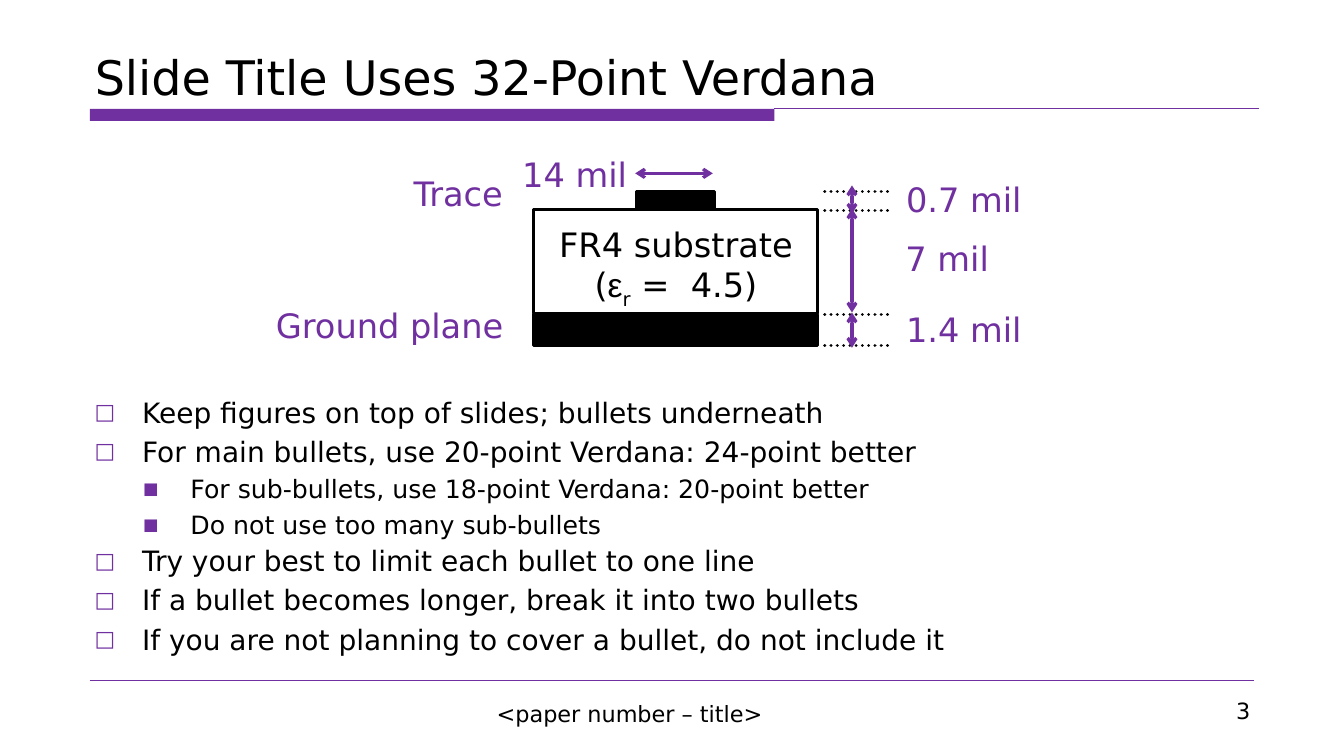
from lxml import etree
from pptx import Presentation
from pptx import util as u
from pptx.dml.color import RGBColor
from pptx.enum import dml, shapes, text
from pptx.oxml.ns import qn

PX = 9144  # 100 px to the inch
FONT = "DejaVu Sans"
PURPLE, BLACK, WHITE = "7030A0", "000000", "FFFFFF"
LEFT, CENTER, RIGHT = text.PP_ALIGN.LEFT, text.PP_ALIGN.CENTER, text.PP_ALIGN.RIGHT

prs = Presentation()
prs.slide_width, prs.slide_height = 1333 * PX, 750 * PX
s = prs.slides.add_slide(prs.slide_layouts[5])


def write(p, words, size, color=BLACK, align=LEFT, font=FONT):
    p.alignment = align
    r = p.add_run()
    r.text = words
    r.font.size, r.font.name = u.Pt(size), font
    r.font.color.rgb = RGBColor.from_string(color)
    return r


def line(x1, y1, x2, y2, color, width, arrows=False):
    c = s.shapes.add_connector(shapes.MSO_CONNECTOR.STRAIGHT, x1 * PX, y1 * PX, x2 * PX, y2 * PX)
    c.line.color.rgb = RGBColor.from_string(color)
    c.line.width = u.Pt(width)
    if arrows:
        for end in ("a:headEnd", "a:tailEnd"):
            etree.SubElement(c.line._get_or_add_ln(), qn(end), type="arrow")
    etree.SubElement(c._element.spPr, qn("a:effectLst"))
    return c


# Title and rules
title = s.shapes.title
title.left, title.top, title.width, title.height = (v * PX for v in (84, 49, 819, 60))
tf = title.text_frame
tf.auto_size = text.MSO_AUTO_SIZE.NONE
tf.vertical_anchor = text.MSO_ANCHOR.BOTTOM
write(tf.paragraphs[0], "Slide Title Uses 32-Point Verdana", 34)
line(768, 108, 1249, 108, PURPLE, 0.75)
line(89, 675, 1244, 675, PURPLE, 0.25)

# Title bar, then substrate, ground plane and trace
for x, y, w, h, fill, edge in [
    (89, 108, 679, 12, PURPLE, None),
    (529, 208, 282, 103, WHITE, BLACK),
    (529, 312, 282, 31, BLACK, BLACK),
    (631, 190, 78, 17, BLACK, BLACK),
]:
    sp = s.shapes.add_shape(shapes.MSO_SHAPE.RECTANGLE, x * PX, y * PX, w * PX, h * PX)
    sp.shadow.inherit = False
    sp.fill.solid()
    sp.fill.fore_color.rgb = RGBColor.from_string(fill)
    if edge:
        sp.line.color.rgb = RGBColor.from_string(edge)
        sp.line.width = u.Pt(2.25)
    else:
        sp.line.fill.background()

# Dimension lines
for y in (190, 209, 312, 343):
    c = line(818, y, 881, y, BLACK, 2.25)
    c.line.dash_style = dml.MSO_LINE.ROUND_DOT
    c.line._get_or_add_ln().set("cap", "rnd")
line(630, 172, 707, 172, PURPLE, 2.25, arrows=True)
for top, bottom in [(207, 310), (310, 345), (184, 212)]:
    line(845, top, 845, bottom, PURPLE, 2.25, arrows=True)

# Figure labels
substrate = [("(", FONT), ("ε", "Arial"), ("r", FONT), (" =  4.5)", FONT)]
for words, x, y, w, h, color in [
    ("FR4 substrate", 549, 222, 243, 85, BLACK),
    ("7 mil", 893, 236, 93, 44, PURPLE),
    ("0.7 mil", 893, 178, 126, 44, PURPLE),
    ("1.4 mil", 893, 306, 126, 44, PURPLE),
    ("14 mil", 513, 153, 114, 44, PURPLE),
    ("Ground plane", 268, 303, 237, 44, PURPLE),
    ("Trace", 404, 172, 101, 44, PURPLE),
]:
    tf = s.shapes.add_textbox(x * PX, y * PX, w * PX, h * PX).text_frame
    tf.word_wrap = False
    tf.margin_left = tf.margin_right = tf.margin_bottom = 4 * PX
    tf.margin_top = 0
    write(tf.paragraphs[0], words, 24, color, CENTER)
    if words == "FR4 substrate":
        p = tf.add_paragraph()
        for part, font in substrate:
            r = write(p, part, 24, color, CENTER, font)
            if part == "r":
                r.font._element.set("baseline", "-25000")

# Bullets: level, space before in points, words
tf = s.shapes.add_textbox(84 * PX, 387 * PX, 1161 * PX, 289 * PX).text_frame
tf.word_wrap = True
for i, (level, space, words) in enumerate([
    (0, 0, "Keep figures on top of slides; bullets underneath"),
    (0, 4, "For main bullets, use 20-point Verdana: 24-point better"),
    (1, 4, "For sub-bullets, use 18-point Verdana: 20-point better"),
    (1, 4, "Do not use too many sub-bullets"),
    (0, 3, "Try your best to limit each bullet to one line"),
    (0, 4, "If a bullet becomes longer, break it into two bullets"),
    (0, 4, "If you are not planning to cover a bullet, do not include it"),
]):
    size, mark, scale = [(20, "□", "78000"), (18, "■", "65000")][level]
    p = tf.add_paragraph() if i else tf.paragraphs[0]
    p.level = level
    pPr = p._p.get_or_add_pPr()
    pPr.set("marL", str((47 + 48 * level) * PX))
    pPr.set("indent", str(-47 * PX))
    etree.SubElement(etree.SubElement(pPr, qn("a:buClr")), qn("a:srgbClr"), val=PURPLE)
    etree.SubElement(pPr, qn("a:buSzPct"), val=scale)
    etree.SubElement(pPr, qn("a:buFont"), typeface=FONT)
    etree.SubElement(pPr, qn("a:buChar"), char=mark)
    if space:
        p.space_before = u.Pt(space)
    write(p, words, size)

# Footer
for words, x, y, w, align in [
    ("3", 1093, 687, 157, RIGHT),
    ("<paper number – title>", 317, 690, 615, CENTER),
]:
    tf = s.shapes.add_textbox(x * PX, y * PX, w * PX, 37 * PX).text_frame
    tf.word_wrap = True
    write(tf.paragraphs[0], words, 16, align=align)

prs.save("out.pptx")
